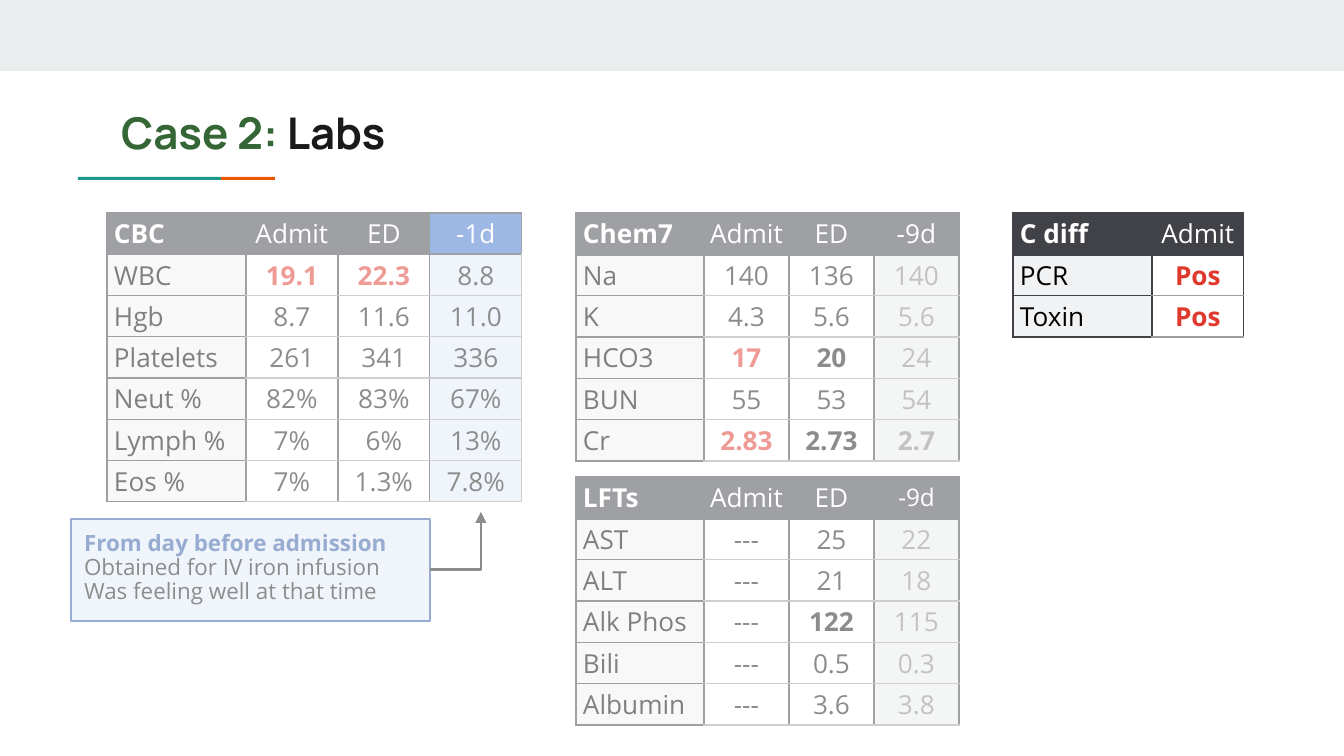
from lxml import etree
from pptx import Presentation
from pptx.dml.color import RGBColor
from pptx.enum.shapes import MSO_CONNECTOR, MSO_SHAPE
from pptx.enum.text import MSO_ANCHOR, MSO_AUTO_SIZE, PP_ALIGN
from pptx.oxml.ns import qn
from pptx.util import Pt

ELBOW = MSO_CONNECTOR.ELBOW
RECTANGLE = MSO_SHAPE.RECTANGLE
TOP, MIDDLE = MSO_ANCHOR.TOP, MSO_ANCHOR.MIDDLE
LEFT, CENTER = PP_ALIGN.LEFT, PP_ALIGN.CENTER

EMU_PER_PX = 914400 / 134.4
DARK, INK, GRID, MUTED = "404247", "1A1A1A", "9E9E9E", "858585"
WHITE, BLACK, RED = "FFFFFF", "000000", "DF382C"
LABEL_FILL, OLD_FILL, BAND = "F1F2F3", "E9EDEE", "E9EDEE"
BLUE, PALE_BLUE, NAVY = "3B71CA", "E2EAF7", "2F5AA2"
GREEN, TEAL, ORANGE = "356635", "1A9988", "EB5600"

CBC = [["CBC", "Admit", "ED", "-1d"],
       ["WBC", "19.1", "22.3", "8.8"],
       ["Hgb", "8.7", "11.6", "11.0"],
       ["Platelets", "261", "341", "336"],
       ["Neut %", "82%", "83%", "67%"],
       ["Lymph %", "7%", "6%", "13%"],
       ["Eos %", "7%", "1.3%", "7.8%"]]
CHEM7 = [["Chem7", "Admit", "ED", "-9d"],
         ["Na", "140", "136", "140"],
         ["K", "4.3", "5.6", "5.6"],
         ["HCO3", "17", "20", "24"],
         ["BUN", "55", "53", "54"],
         ["Cr", "2.83", "2.73", "2.7"]]
LFTS = [["LFTs", "Admit", "ED", "-9d"],
        ["AST", "---", "25", "22"],
        ["ALT", "---", "21", "18"],
        ["Alk Phos", "---", "122", "115"],
        ["Bili", "---", "0.5", "0.3"],
        ["Albumin", "---", "3.6", "3.8"]]
C_DIFF = [["C diff", "Admit"], ["PCR", "Pos"], ["Toxin", "Pos"]]


def px(length):
    return round(length * EMU_PER_PX)


def color(value):
    return RGBColor.from_string(value)


def add_text(paragraph, text, size=14, font="Open Sans", fill=INK, bold=False, align=LEFT):
    paragraph.alignment = align
    run = paragraph.add_run()
    run.text = text
    run.font.size = Pt(size)
    run.font.name = font
    run.font.bold = bold
    run.font.color.rgb = color(fill)


def set_insets(frame, inset):
    frame.margin_left = frame.margin_right = px(inset)
    frame.margin_top = frame.margin_bottom = px(inset)


def add_box(slide, box, fill, line=None):
    shape = slide.shapes.add_shape(RECTANGLE, *map(px, box))
    shape.shadow.inherit = False
    shape.fill.solid()
    shape.fill.fore_color.rgb = color(fill)
    if line:
        shape.line.color.rgb = color(line)
        shape.line.width = Pt(0.75)
    else:
        shape.line.fill.background()
    return shape


def set_border(cell, side, stroke, width):
    line = etree.SubElement(cell._tc.get_or_add_tcPr(), qn(f"a:ln{side}"), w=str(Pt(width)))
    fill = etree.SubElement(line, qn("a:solidFill"))
    etree.SubElement(fill, qn("a:srgbClr"), val=stroke)


def add_lab_table(slide, box, rows, label_width, emphasis, last_header=DARK,
                  last_fill=WHITE, last_text=INK, last_edge=DARK, last_header_size=14):
    """Emphasis maps (row, column) to the colour of a bold value."""
    table = slide.shapes.add_table(len(rows), len(rows[0]), *map(px, box)).table
    table.first_row = table.horz_banding = False
    last = len(rows[0]) - 1
    for index, column in enumerate(table.columns):
        column.width = px((box[2] - label_width) / last if index else label_width)

    for r, row in enumerate(rows):
        for c, text in enumerate(row):
            cell = table.cell(r, c)
            is_header, is_label, is_last = r == 0, c == 0, c == last
            # Borders: dark around header and labels, light between values
            flat = DARK if is_header or is_label else GRID
            set_border(cell, "L", DARK, 0.75)
            set_border(cell, "R", last_edge if is_last and not is_header else DARK, 0.75)
            set_border(cell, "T", DARK if r == 1 else flat, 1.5 if r == 1 else 0.75)
            set_border(cell, "B", flat, 1.5 if is_header else 0.75)
            # Fill and text colour by role
            if is_header:
                fill, ink = (last_header if is_last else DARK), WHITE
            elif is_label:
                fill, ink = LABEL_FILL, BLACK
            else:
                fill, ink = (last_fill, last_text) if is_last else (WHITE, INK)
            cell.fill.solid()
            cell.fill.fore_color.rgb = color(fill)
            cell.vertical_anchor = MIDDLE
            cell.margin_left = px(7) if is_label else 0
            cell.margin_right = cell.margin_top = cell.margin_bottom = 0
            add_text(cell.text_frame.paragraphs[0], text,
                     size=last_header_size if is_header and is_last else 14,
                     fill=emphasis.get((r, c), ink),
                     bold=(r, c) in emphasis or (is_header and is_label),
                     align=LEFT if is_label else CENTER)


def add_title(slide, box):
    title = slide.shapes.title
    title.left, title.top, title.width, title.height = map(px, box)
    frame = title.text_frame
    frame.auto_size = MSO_AUTO_SIZE.NONE
    frame.word_wrap = True
    frame.vertical_anchor = TOP
    set_insets(frame, 13)
    for text, fill in (("Case 2:", GREEN), (" Labs", INK)):
        add_text(frame.paragraphs[0], text, size=23.4, font="Manrope", fill=fill, bold=True)


def add_callout(slide, box):
    left, top, width, height = box
    frame = add_box(slide, box, PALE_BLUE, NAVY).text_frame
    frame.word_wrap = True
    frame.vertical_anchor = TOP
    set_insets(frame, 13)
    lines = ["From day before admission", "Obtained for IV iron infusion",
             "Was feeling well at that time"]
    for index, text in enumerate(lines):
        paragraph = frame.add_paragraph() if index else frame.paragraphs[0]
        paragraph.line_spacing = 0.9
        add_text(paragraph, text, size=12, fill=INK if index else NAVY, bold=index == 0)

    # Arrow from the right edge up to the last CBC column
    right, middle = left + width, top + height / 2
    arrow = slide.shapes.add_connector(ELBOW, px(right), px(middle), px(right + 51), px(top - 7))
    arrow.line.color.rgb = color(INK)
    arrow.line.width = Pt(1.5)
    properties = arrow._element.spPr
    properties.find(qn("a:prstGeom")).set("prst", "bentConnector2")
    etree.SubElement(properties.find(qn("a:ln")), qn("a:tailEnd"), type="triangle")
    etree.SubElement(properties, qn("a:effectLst"))


def add_veil(slide, box):
    veil = add_box(slide, box, WHITE)
    rgb = veil._element.spPr.find(qn("a:solidFill")).find(qn("a:srgbClr"))
    etree.SubElement(rgb, qn("a:alpha"), val="50000")


def main():
    presentation = Presentation()
    presentation.slide_width, presentation.slide_height = px(1344), px(756)
    slide = presentation.slides.add_slide(presentation.slide_layouts[5])

    # Top band, title and its two-colour rule
    add_box(slide, (0, 0, 1344, 71), BAND)
    add_box(slide, (221, 177, 54, 3), ORANGE)
    add_box(slide, (78, 177, 143, 3), TEAL)
    add_title(slide, (108, 93, 1130, 79))

    # Lab tables
    add_lab_table(slide, (107, 213, 415, 289), CBC, 139, {(1, 1): RED, (1, 2): RED},
                  last_header=BLUE, last_fill=PALE_BLUE, last_edge=GRID)
    old_values = {"last_fill": OLD_FILL, "last_text": MUTED}
    add_lab_table(slide, (576, 213, 383, 248), CHEM7, 128,
                  {(3, 1): RED, (3, 2): INK, (5, 1): RED, (5, 2): INK, (5, 3): MUTED},
                  **old_values)
    add_lab_table(slide, (576, 477, 383, 248), LFTS, 128, {(3, 2): INK},
                  last_header_size=13, **old_values)
    add_callout(slide, (71, 519, 359, 102))
    add_lab_table(slide, (1013, 213, 231, 124), C_DIFF, 139, {(1, 1): RED, (2, 1): RED})

    # Translucent veil that fades everything but the C diff result
    add_veil(slide, (54, 196, 923, 550))
    presentation.save("out.pptx")


if __name__ == "__main__":
    main()
